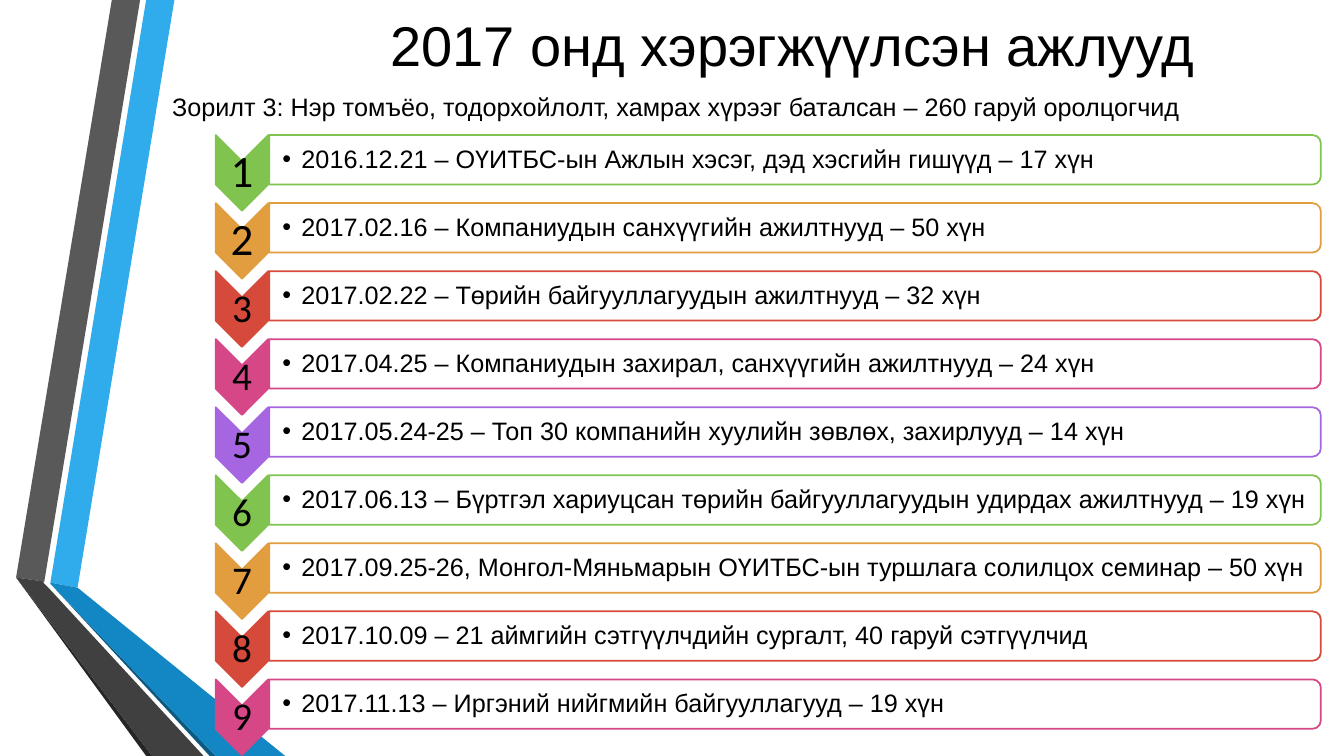
from dataclasses import dataclass
from itertools import cycle

from lxml import etree
from pptx import Presentation
from pptx import util as u
from pptx.dml.color import RGBColor
from pptx.enum import shapes, text
from pptx.oxml import ns


@dataclass(frozen=True)
class Theme:
    ink: str = "000000"
    paper: str = "FFFFFF"
    accents: tuple = ("80C34F", "E29D3E", "D64A3B", "D64787", "A666E1")
    font: str = "Arial"
    number_font: str = "Calibri"
    title_size: int = 40
    body_size: int = 18
    large_number_size: int = 32
    number_size: int = 28
    outline: float = 1.25


THEME = Theme()

RIBBONS = (
    ("30ACEC", ((0.5, 5.78), (0.77, 5.83), (1.73, 0), (1.45, 0))),
    ("595959", ((1.39, 0), (1.11, 0), (0.16, 5.73), (0.44, 5.77))),
    ("262626", ((0.16, 5.73), (1.45, 7.5), (1.51, 7.5))),
    ("0C5A82", ((0.5, 5.79), (2.08, 7.5), (2.14, 7.5))),
    ("1287C3", ((0.5, 5.79), (2.14, 7.5), (2.83, 7.5), (0.77, 5.83), (0.5, 5.78))),
    ("404040", ((2.02, 7.5), (0.48, 5.83), (0.43, 5.78), (0.44, 5.77),
                (0.16, 5.73), (1.51, 7.5))),
)

EVENTS = (
    "2016.12.21 – ОҮИТБС-ын Ажлын хэсэг, дэд хэсгийн гишүүд – 17 хүн",
    "2017.02.16 – Компаниудын санхүүгийн ажилтнууд – 50 хүн",
    "2017.02.22 – Төрийн байгууллагуудын ажилтнууд – 32 хүн",
    "2017.04.25 – Компаниудын захирал, санхүүгийн ажилтнууд – 24 хүн",
    "2017.05.24-25 – Топ 30 компанийн хуулийн зөвлөх, захирлууд – 14 хүн",
    "2017.06.13 – Бүртгэл хариуцсан төрийн байгууллагуудын удирдах ажилтнууд – 19 хүн",
    "2017.09.25-26, Монгол-Мяньмарын ОҮИТБС-ын туршлага солилцох семинар – 50 хүн",
    "2017.10.09 – 21 аймгийн сэтгүүлчдийн сургалт, 40 гаруй сэтгүүлчид",
    "2017.11.13 – Иргэний нийгмийн байгууллагууд – 19 хүн",
)
FIRST_ROW, LAST_ROW = 1.34, 6.74
ROW_PITCH = (LAST_ROW - FIRST_ROW) / (len(EVENTS) - 1)


def paint(shape, color):
    shape.shadow.inherit = False
    shape.fill.solid()
    shape.fill.fore_color.rgb = RGBColor.from_string(color)


def add_ribbon(slide, color, points):
    corners = [(u.Inches(x), u.Inches(y)) for x, y in points]
    builder = slide.shapes.build_freeform(*corners[0])
    builder.add_line_segments(corners[1:])
    ribbon = builder.convert_to_shape()
    paint(ribbon, color)
    ribbon.line.fill.background()


def add_turned_shape(slide, kind, left, top, width, height, fill, outline):
    """Add a shape turned clockwise by 90 degrees; the box given is the visible one."""
    shift = (width - height) / 2
    shape = slide.shapes.add_shape(
        kind, u.Inches(left + shift), u.Inches(top - shift), u.Inches(height), u.Inches(width))
    shape.rotation = 90
    paint(shape, fill)
    shape.line.color.rgb = RGBColor.from_string(outline)
    shape.line.width = u.Pt(THEME.outline)
    return shape


def set_opacity(shape, percent):
    color = shape.fill._xPr.find(".//" + ns.qn("a:srgbClr"))
    etree.SubElement(color, ns.qn("a:alpha"), val=str(percent * 1000))


def set_text(frame, words, size, font=THEME.font):
    frame.text = words
    paragraph = frame.paragraphs[0]
    paragraph.font.size = u.Pt(size)
    paragraph.font.name = font
    paragraph.font.color.rgb = RGBColor.from_string(THEME.ink)
    return paragraph


def add_label(slide, box, words, size, font=THEME.font, inset=0.02, left_inset=0.02):
    """Add a vertically centred single-line text box and return its paragraph."""
    frame = slide.shapes.add_textbox(*map(u.Inches, box)).text_frame
    frame.word_wrap = True
    frame.vertical_anchor = text.MSO_ANCHOR.MIDDLE
    frame.margin_left = u.Inches(left_inset)
    frame.margin_top = frame.margin_right = frame.margin_bottom = u.Inches(inset)
    paragraph = set_text(frame, words, size, font)
    paragraph.line_spacing = 0.9
    return paragraph


def set_bullet(paragraph, indent):
    properties = paragraph._p.get_or_add_pPr()
    properties.set("marL", str(u.Inches(indent)))
    properties.set("indent", str(-u.Inches(indent)))
    etree.SubElement(properties, ns.qn("a:buFont"), typeface=THEME.font)
    etree.SubElement(properties, ns.qn("a:buChar"), char="•")


def add_event(slide, number, words, color):
    top = FIRST_ROW + (number - 1) * ROW_PITCH
    add_turned_shape(slide, shapes.MSO_SHAPE.CHEVRON, 2.14, top, 0.52, 0.75, color, color)
    size = THEME.large_number_size if number <= 2 else THEME.number_size
    digit = add_label(slide, (2.14, top + 0.27, 0.52, 0.22), str(number), size, THEME.number_font)
    digit.alignment = text.PP_ALIGN.CENTER

    bar = add_turned_shape(slide, shapes.MSO_SHAPE.ROUND_2_SAME_RECTANGLE,
                           2.67, top, 10.43, 0.49, THEME.paper, color)
    set_opacity(bar, 90)
    event = add_label(slide, (2.66, top + 0.03, 10.41, 0.44), words, THEME.body_size,
                      inset=0.01, left_inset=0.14)
    set_bullet(event, 0.19)


def set_title(slide, words):
    title = slide.shapes.title
    title.left, title.top, title.width, title.height = map(u.Inches, (2.38, 0, 10.96, 0.87))
    title.text_frame.vertical_anchor = text.MSO_ANCHOR.MIDDLE
    title.text_frame.auto_size = text.MSO_AUTO_SIZE.NONE
    paragraph = set_text(title.text_frame, words, THEME.title_size)
    paragraph.alignment = text.PP_ALIGN.CENTER


def add_subtitle(slide, words):
    box = slide.shapes.add_textbox(*map(u.Inches, (1.61, 0.86, 10.64, 0.4)))
    box.text_frame.word_wrap = False
    box.text_frame.auto_size = text.MSO_AUTO_SIZE.SHAPE_TO_FIT_TEXT
    set_text(box.text_frame, words, THEME.body_size)


def main():
    presentation = Presentation()
    presentation.slide_width = u.Inches(13.33)
    presentation.slide_height = u.Inches(7.5)
    slide = presentation.slides.add_slide(presentation.slide_layouts.get_by_name("Title Only"))

    for color, points in RIBBONS:
        add_ribbon(slide, color, points)
    for number, (words, color) in enumerate(zip(EVENTS, cycle(THEME.accents)), start=1):
        add_event(slide, number, words, color)
    set_title(slide, "2017 онд хэрэгжүүлсэн ажлууд")
    add_subtitle(slide, "Зорилт 3: Нэр томъёо, тодорхойлолт, хамрах хүрээг баталсан"
                        " – 260 гаруй оролцогчид")
    presentation.save("out.pptx")


if __name__ == "__main__":
    main()
